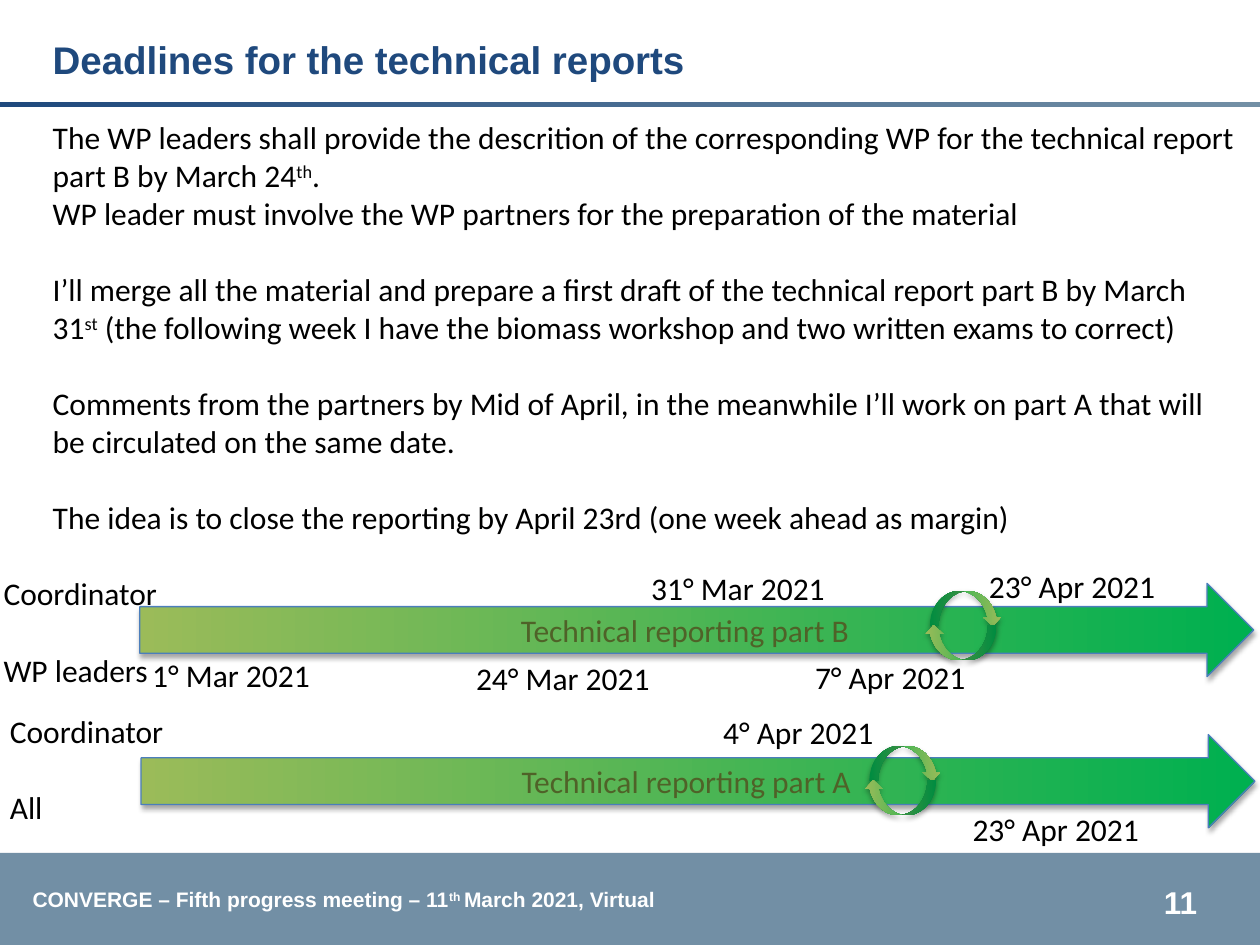
from lxml import etree
from pptx import Presentation
from pptx import util as u
from pptx.dml.color import RGBColor
from pptx.enum import shapes, text
from pptx.oxml.ns import qn

COLORS = {
    "navy": "1F497D", "steel": "728FA5", "white": "FFFFFF", "black": "000000",
    "olive": "9BBB59", "green": "00B050", "outline": "4B7EBC", "moss": "4F6228",
}
RGB = {name: RGBColor.from_string(value) for name, value in COLORS.items()}

presentation = Presentation()
presentation.slide_width, presentation.slide_height = u.Inches(10), u.Inches(7.5)
slide = presentation.slides.add_slide(presentation.slide_layouts[6])

# Positions are counted in a grid of 100 columns by 75 rows
COLUMN = presentation.slide_width / 100
ROW = presentation.slide_height / 75


def write(box, paragraphs, size=18, font="Calibri", color="black", bold=False):
    """Fill a text frame; each paragraph is (text, space before), with ^ around superscripts."""
    frame = box.text_frame
    frame.word_wrap = True
    for index, (content, gap) in enumerate(paragraphs):
        paragraph = frame.paragraphs[0] if index == 0 else frame.add_paragraph()
        for part, piece in enumerate(content.split("^")):
            run = paragraph.add_run()
            run.text = piece
            if part % 2:
                run._r.get_or_add_rPr().set("baseline", "30000")
        paragraph.space_before = u.Pt(gap)
        paragraph.font.size, paragraph.font.name = u.Pt(size), font
        paragraph.font.bold, paragraph.font.color.rgb = bold, RGB[color]
    return frame


def add_block(kind, left, top, width, height, colors, last_stop=1, shadow=False):
    """Add a borderless shape in one colour or a left-to-right gradient."""
    shape = slide.shapes.add_shape(kind, *map(round, (
        left * COLUMN, top * ROW, width * COLUMN, height * ROW)))
    if len(colors) == 1:
        shape.fill.solid()
        shape.fill.fore_color.rgb = RGB[colors[0]]
    else:
        shape.fill.gradient()
        shape.fill.gradient_angle = 0
        for stop, color, position in zip(shape.fill.gradient_stops, colors, (0, last_stop)):
            stop.color.rgb, stop.position = RGB[color], position
    shape.line.fill.background()
    shape.shadow.inherit = False
    if shadow:
        effects = shape._element.spPr.find(qn("a:effectLst"))
        outer = etree.SubElement(effects, qn("a:outerShdw"), blurRad=str(u.Pt(3.1)),
                                 dist=str(u.Pt(1.8)), dir="5400000", rotWithShape="0")
        tone = etree.SubElement(outer, qn("a:srgbClr"), val=COLORS["black"])
        etree.SubElement(tone, qn("a:alpha"), val="35000")
    return shape


# Footer band and rule under the title
add_block(shapes.MSO_SHAPE.RECTANGLE, 0, 67.7, 100, 7.3, ["steel"])
add_block(shapes.MSO_SHAPE.RECTANGLE, 0, 8.1, 100, 0.4, ["navy", "steel"])

# Timeline arrows
for left, top, label in [(11.1, 46.3, "Technical reporting part B"),
                         (11.2, 58.3, "Technical reporting part A")]:
    arrow = add_block(shapes.MSO_SHAPE.RIGHT_ARROW, left, top, 88.4, 7.4,
                      ["olive", "green"], 0.99, shadow=True)
    arrow.line.color.rgb, arrow.line.width = RGB["outline"], u.Pt(0.75)
    frame = write(arrow, [(label, 0)], color="moss")
    frame.vertical_anchor = text.MSO_ANCHOR.MIDDLE
    frame.paragraphs[0].alignment = text.PP_ALIGN.CENTER

# Text boxes: left, top, width, height, paragraphs, style
LINE = 22  # one line of 18 pt text, in points
arial = {"font": "Arial", "bold": True}
body = [
    ("The WP leaders shall provide the descrition of the corresponding WP for the "
     "technical report part B by March 24^th^.", 0),
    ("WP leader must involve the WP partners for the preparation of the material", 0),
    ("I’ll merge all the material and prepare a first draft of the technical report part B "
     "by March 31^st^ (the following week I have the biomass workshop and two written "
     "exams to correct)", LINE),
    ("Comments from the partners by Mid of April, in the meanwhile I’ll work on part A "
     "that will be circulated on the same date.", LINE),
    ("The idea is to close the reporting by April 23rd (one week ahead as margin)", LINE),
]
boxes = [
    (3.2, 1.2, 93.8, 5.8, [("Deadlines for the technical reports", 0)],
     {"size": 22, "color": "navy", **arial}),
    (3.2, 8.9, 96, 37.4, body, {}),
    (1.6, 69.9, 52.1, 3,
     [("CONVERGE – Fifth progress meeting – 11^th ^March 2021, Virtual", 0)],
     {"size": 12, "color": "white", **arial}),
    (90.3, 69.6, 6.8, 3.6, [("11", 0)], {"color": "white", **arial}),
    (-0.7, 45.1, 19.7, 10.1, [("Coordinator", 0), ("WP leaders", LINE)], {}),
    (-0.2, 56, 19.7, 10.1, [("Coordinator", 0), ("All", LINE)], {}),
]
dates = [
    (11.1, 51.6, "1° Mar 2021"), (36.8, 51.8, "24° Mar 2021"),
    (50.7, 44.7, "31° Mar 2021"), (63.7, 51.7, "7° Apr 2021"),
    (77.5, 44.5, "23° Apr 2021"), (56.4, 56.1, "4° Apr 2021"),
    (76.2, 63.8, "23° Apr 2021"),
]
boxes += [(left, top, 19.7 if "Mar" in date else 15.8, 4, [(date, 0)], {})
          for left, top, date in dates]

frames = []
for left, top, width, height, paragraphs, style in boxes:
    box = slide.shapes.add_textbox(*map(round, (
        left * COLUMN, top * ROW, width * COLUMN, height * ROW)))
    frames.append(write(box, paragraphs, **style))

title, _, footer, number = frames[:4]
title.vertical_anchor = text.MSO_ANCHOR.BOTTOM
footer.word_wrap = False
number.margin_left = number.margin_right = 0
number.paragraphs[0].alignment = text.PP_ALIGN.CENTER

# Review cycles: two curved arrows each, the lower one turned half round
for left, top in [(73.8, 46.9), (69, 59.2)]:
    for shift, drop, turn in [(0, 0, 0), (-0.4, 2.7, 180)]:
        curve = add_block(shapes.MSO_SHAPE.CURVED_DOWN_ARROW, left + shift, top + drop,
                          5.7, 2.8, ["green", "olive"], shadow=True)
        curve.rotation = turn

presentation.save("out.pptx")
